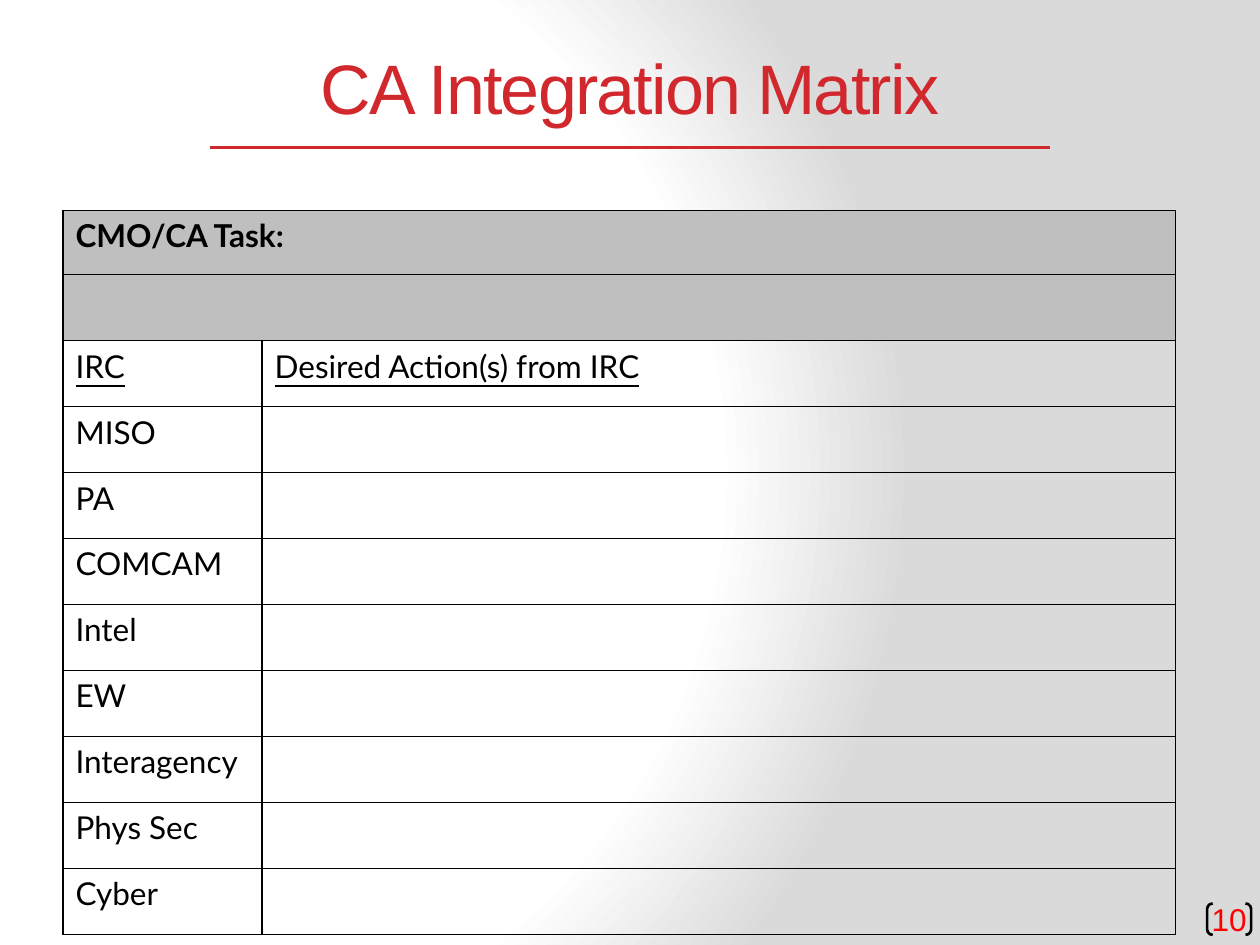
from dataclasses import dataclass
from typing import Any, NamedTuple

from lxml import etree
from pptx import Presentation
from pptx.dml import color
from pptx.enum import shapes, text
from pptx.oxml import ns
from pptx.util import Inches, Pt


@dataclass(frozen=True)
class Theme:
    red: str = "D1282E"
    number_red: str = "FF0000"
    ink: str = "000000"
    band: str = "BFBFBF"
    white: str = "FFFFFF"
    haze: str = "DADADA"
    heading_font: str = "Arial"
    body_font: str = "Lato"
    title_size: int = 40
    body_size: int = 18


class MatrixRow(NamedTuple):
    label: str
    action: str = ""
    band: bool = False
    bold: bool = False
    underline: bool = False


THEME = Theme()
IRCS = ["MISO", "PA", "COMCAM", "Intel", "EW", "Interagency", "Phys Sec", "Cyber"]
ROWS = [
    MatrixRow("CMO/CA Task:", band=True, bold=True),
    MatrixRow("", band=True),
    MatrixRow("IRC", "Desired Action(s) from IRC", underline=True),
    *[MatrixRow(irc) for irc in IRCS],
]


def rgb(value: str) -> color.RGBColor:
    return color.RGBColor.from_string(value)


def add_xml(parent: Any, tag: str, **attributes: str) -> Any:
    child = etree.SubElement(parent, ns.qn(tag))
    for key, value in attributes.items():
        child.set(key, value)
    return child


def format_font(font: Any, ink: str, **values: Any) -> None:
    for key, value in values.items():
        setattr(font, key, value)
    font.color.rgb = rgb(ink)


def paint_background(slide: Any) -> None:
    slide.background.fill.gradient()
    gradient = slide.element.find(".//" + ns.qn("a:gradFill"))
    for child in list(gradient):
        gradient.remove(child)
    stops = add_xml(gradient, "a:gsLst")
    for position, tint in ((0, THEME.white), (75, THEME.white), (100, THEME.haze)):
        stop = add_xml(stops, "a:gs", pos=str(position * 1000))
        add_xml(stop, "a:srgbClr", val=tint)
    circle = add_xml(gradient, "a:path", path="circle")
    add_xml(circle, "a:fillToRect", l="20000", t="50000", r="100000", b="50000")


def add_title(slide: Any, wording: str) -> None:
    title = slide.shapes.title
    place = dict(left=1.5, top=0.25, width=7, height=1.25)
    for key, value in place.items():
        setattr(title, key, Inches(value))
    frame = title.text_frame
    frame.text = wording
    layout = dict(vertical_anchor=text.MSO_ANCHOR.TOP, margin_top=Inches(0.1),
                  auto_size=text.MSO_AUTO_SIZE.NONE, word_wrap=True)
    for key, value in layout.items():
        setattr(frame, key, value)
    paragraph = frame.paragraphs[0]
    paragraph.alignment = text.PP_ALIGN.CENTER
    paragraph.space_before = Pt(0)
    run = paragraph.runs[0]
    format_font(run.font, THEME.red, name=THEME.heading_font, size=Pt(THEME.title_size))
    run.font._element.set("spc", "-100")


def add_title_rule(slide: Any) -> None:
    rule = slide.shapes.add_connector(
        shapes.MSO_CONNECTOR.STRAIGHT, Inches(1.67), Inches(1.17), Inches(8.33), Inches(1.17))
    rule.line.color.rgb = rgb(THEME.red)
    rule.line.width = Pt(2)
    add_xml(rule._element.spPr, "a:effectLst")


def add_page_number(slide: Any, number: str) -> None:
    bracket = slide.shapes.add_shape(
        shapes.MSO_SHAPE.DOUBLE_BRACKET, Inches(9.58), Inches(7.17), Inches(0.35), Inches(0.25))
    bracket.adjustments[0] = 0.18
    bracket.shadow.inherit = False
    bracket.fill.background()
    bracket.line.color.rgb = rgb(THEME.ink)
    bracket.line.width = Pt(1.5)
    frame = bracket.text_frame
    frame.text = number
    layout = dict(margin_left=0, margin_top=0, margin_right=0, margin_bottom=0,
                  word_wrap=False, vertical_anchor=text.MSO_ANCHOR.MIDDLE)
    for key, value in layout.items():
        setattr(frame, key, value)
    paragraph = frame.paragraphs[0]
    paragraph.alignment = text.PP_ALIGN.CENTER
    format_font(paragraph.runs[0].font, THEME.number_red,
                name=THEME.heading_font, size=Pt(THEME.body_size))


def style_cell(cell: Any, wording: str, row: MatrixRow) -> None:
    properties = cell._tc.get_or_add_tcPr()
    for side in ("a:lnL", "a:lnR", "a:lnT", "a:lnB"):
        border = add_xml(properties, side, w=str(Pt(1)))
        add_xml(add_xml(border, "a:solidFill"), "a:srgbClr", val=THEME.ink)
    if row.band:
        cell.fill.solid()
        cell.fill.fore_color.rgb = rgb(THEME.band)
    else:
        cell.fill.background()
    cell.text = wording
    for run in cell.text_frame.paragraphs[0].runs:
        format_font(run.font, THEME.ink, name=THEME.body_font, size=Pt(THEME.body_size),
                    bold=row.bold, underline=row.underline)


def add_matrix(slide: Any) -> None:
    height, first_height = Inches(5.75), Inches(0.51)
    matrix = slide.shapes.add_table(
        len(ROWS), 2, Inches(0.5), Inches(1.67), Inches(8.83), height).table
    matrix.first_row = matrix.horz_banding = False
    for column, width in zip(matrix.columns, (1.58, 7.25)):
        column.width = Inches(width)
    row_height = (height - first_height) // (len(ROWS) - 1)
    for index, row in enumerate(ROWS):
        matrix.rows[index].height = row_height if index else first_height
        label, action = matrix.cell(index, 0), matrix.cell(index, 1)
        style_cell(label, row.label, row)
        style_cell(action, row.action, row)
        if row.band:
            label.merge(action)


def main() -> None:
    deck = Presentation()
    deck.slide_width, deck.slide_height = Inches(10), Inches(7.5)
    slide = deck.slides.add_slide(deck.slide_layouts[5])
    paint_background(slide)
    add_title_rule(slide)
    add_title(slide, "CA Integration Matrix")
    add_page_number(slide, "10")
    add_matrix(slide)
    deck.save("out.pptx")


if __name__ == "__main__":
    main()
